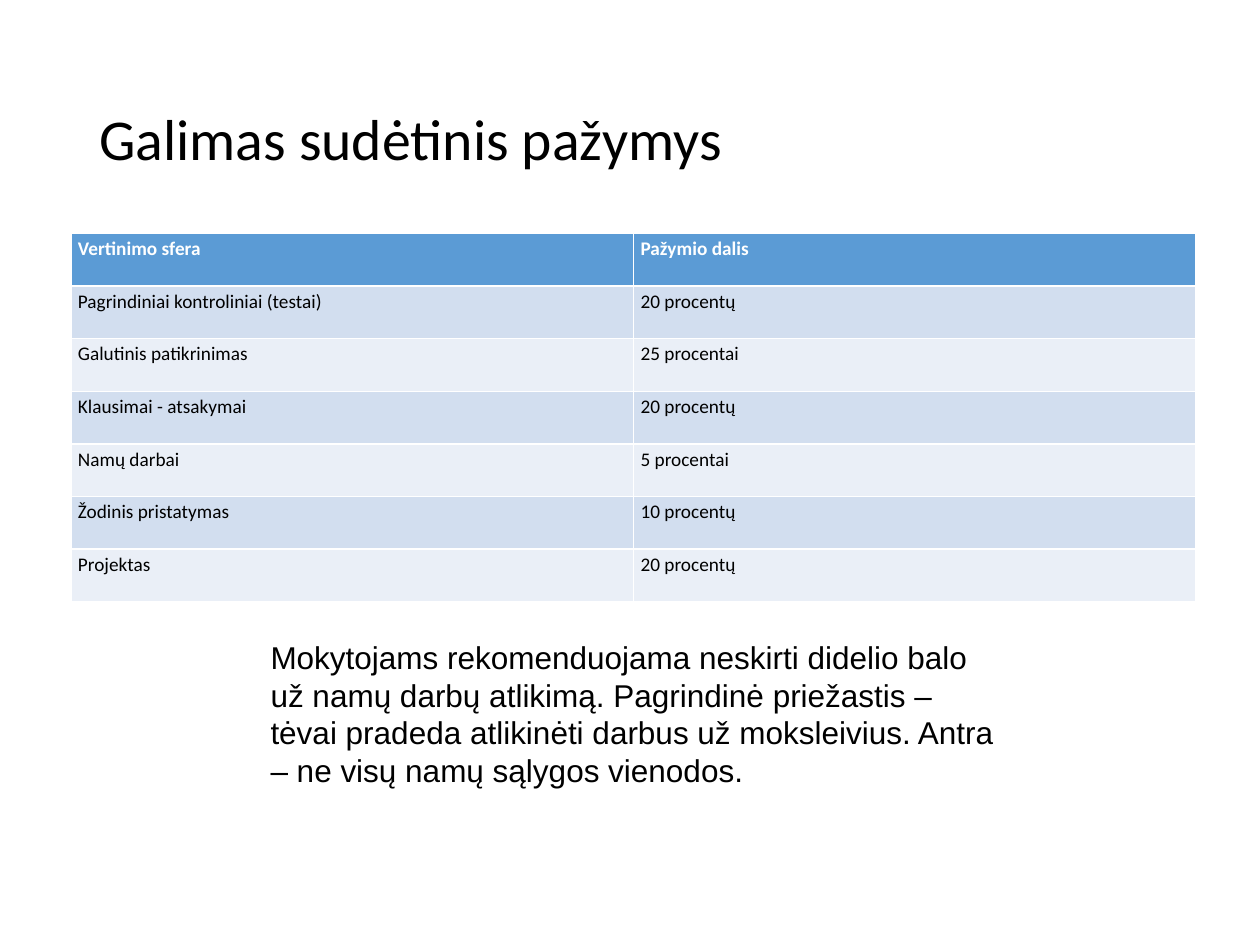
from pptx import Presentation
from pptx.dml.color import RGBColor
from pptx.enum.text import MSO_ANCHOR, PP_ALIGN
from pptx.util import Pt

ROWS = [
    ("Vertinimo sfera", "Pažymio dalis"),
    ("Pagrindiniai kontroliniai (testai)", "20 procentų"),
    ("Galutinis patikrinimas", "25 procentai"),
    ("Klausimai - atsakymai", "20 procentų"),
    ("Namų darbai", "5 procentai"),
    ("Žodinis pristatymas", "10 procentų"),
    ("Projektas", "20 procentų"),
]
NOTE = ("Mokytojams rekomenduojama neskirti didelio balo už namų darbų atlikimą. "
        "Pagrindinė priežastis – tėvai pradeda atlikinėti darbus už moksleivius. "
        "Antra – ne visų namų sąlygos vienodos.")
HEADER_FILL = "5B9BD5"
BAND_FILLS = ("EAEFF7", "D2DEEF")


def color(value):
    return RGBColor.from_string(value)


def write(tf, text, size, font, fill="000000", bold=False):
    tf.text = text
    f = tf.paragraphs[0].runs[0].font
    f.size, f.name, f.bold = Pt(size), font, bold
    f.color.rgb = color(fill)


def add_title(s, x, y, w, h):
    sp = s.shapes.title
    sp.left, sp.top, sp.width, sp.height = Pt(x), Pt(y), Pt(w), Pt(h)
    tf = sp.text_frame
    write(tf, "Galimas sudėtinis pažymys", 33, "Calibri")
    tf.vertical_anchor = MSO_ANCHOR.MIDDLE
    p = tf.paragraphs[0]
    p.alignment = PP_ALIGN.LEFT
    p.line_spacing = 0.9


def add_grade_table(s, x, y, w, h):
    """Two equal columns; the default table style supplies the white borders."""
    table = s.shapes.add_table(len(ROWS), 2, Pt(x), Pt(y), Pt(w), Pt(h)).table
    for i, row in enumerate(ROWS):
        table.rows[i].height = Pt(h / len(ROWS))
        header = i == 0
        for j, text in enumerate(row):
            cell = table.cell(i, j)
            cell.margin_left = cell.margin_right = Pt(4.05)
            cell.margin_top = cell.margin_bottom = Pt(2.03)
            cell.fill.solid()
            cell.fill.fore_color.rgb = color(HEADER_FILL if header else BAND_FILLS[i % 2])
            write(cell.text_frame, text, 11, "Calibri",
                  "FFFFFF" if header else "000000", header)


def add_note(s, x, y, w, h):
    tf = s.shapes.add_textbox(Pt(x), Pt(y), Pt(w), Pt(h)).text_frame
    tf.word_wrap = True
    write(tf, NOTE, 18, "Arial")


def main():
    prs = Presentation()
    prs.slide_width, prs.slide_height = Pt(720), Pt(540)
    s = prs.slides.add_slide(prs.slide_layouts[5])
    add_title(s, 49.5, 28.75, 621, 104.4)
    add_grade_table(s, 40.5, 133.4, 643, 210.6)
    add_note(s, 147.5, 361, 434, 94.5)
    prs.save("out.pptx")


if __name__ == "__main__":
    main()
